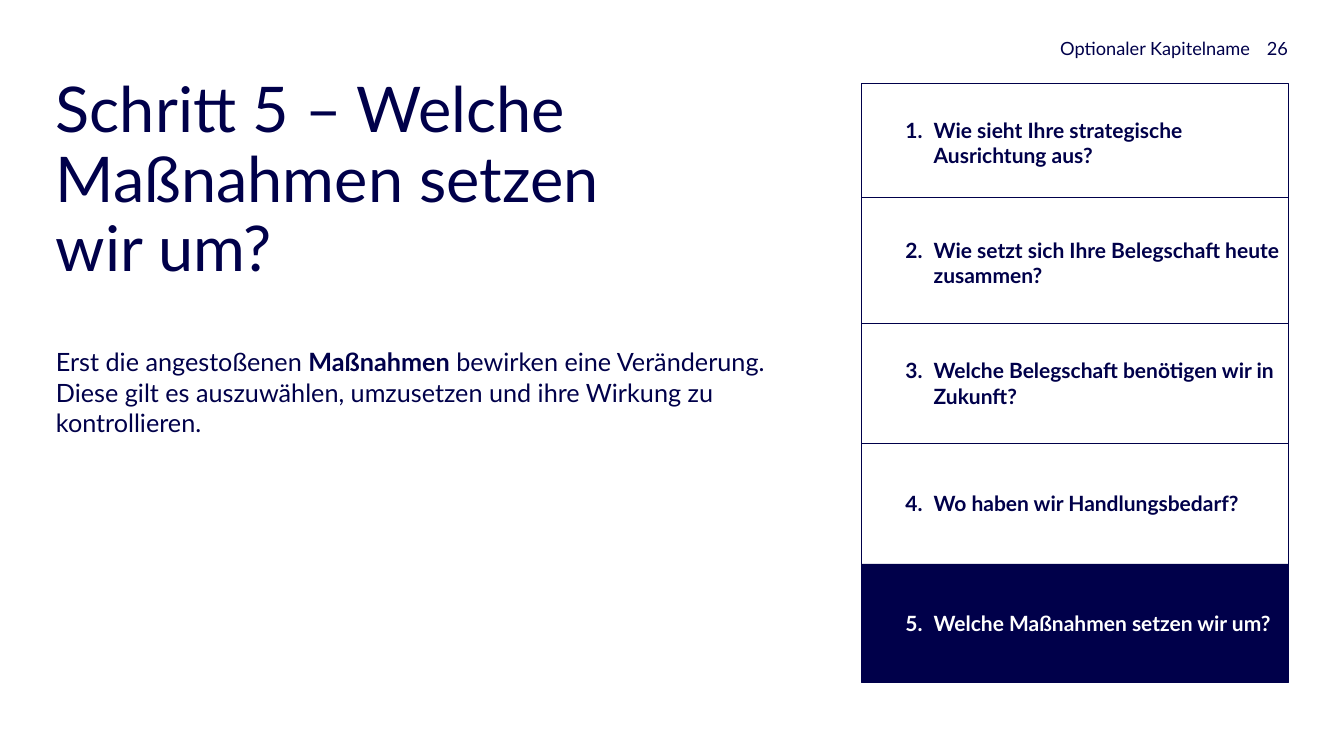
from lxml import etree
from pptx import Presentation
from pptx.dml.color import RGBColor
from pptx.enum.shapes import MSO_CONNECTOR, MSO_SHAPE
from pptx.enum.text import MSO_ANCHOR, PP_ALIGN
from pptx.oxml.ns import qn
from pptx.util import Inches, Pt

RECTANGLE = MSO_SHAPE.RECTANGLE
STRAIGHT = MSO_CONNECTOR.STRAIGHT
TOP, MIDDLE, BOTTOM = MSO_ANCHOR.TOP, MSO_ANCHOR.MIDDLE, MSO_ANCHOR.BOTTOM
LEFT, RIGHT = PP_ALIGN.LEFT, PP_ALIGN.RIGHT

FONT = "Lato"
COLORS = {"navy": "00004A", "white": "FFFFFF"}
STEPS = [
    "Wie sieht Ihre strategische Ausrichtung aus?",
    "Wie setzt sich Ihre Belegschaft heute zusammen?",
    "Welche Belegschaft benötigen wir in Zukunft?",
    "Wo haben wir Handlungsbedarf?",
    "Welche Maßnahmen setzen wir um?",
]
ACTIVE_STEP = 5
STEP_HEIGHT = 2.35
DIVIDERS = [3.92, 6.41, 8.8]


def color(name):
    """Return the named colour."""
    return RGBColor.from_string(COLORS[name])


def prepare_frame(shape, anchor, margins=(0, 0, 0, 0)):
    """Set wrapping, anchor and margins, and return the text frame."""
    frame = shape.text_frame
    frame.word_wrap = True
    frame.vertical_anchor = anchor
    frame.margin_left, frame.margin_top, frame.margin_right, frame.margin_bottom = map(Inches, margins)
    return frame


def add_run(paragraph, text, size, color_name="navy", bold=False):
    """Append a formatted run to a paragraph."""
    run = paragraph.add_run()
    run.text = text
    run.font.name = FONT
    run.font.size = Pt(size)
    run.font.bold = bold
    run.font.color.rgb = color(color_name)


def add_text(slide, box, pieces, size, anchor=TOP, align=LEFT, spacing=None):
    """Add a text box whose pieces are (text, bold) pairs."""
    shape = slide.shapes.add_textbox(*map(Inches, box))
    paragraph = prepare_frame(shape, anchor).paragraphs[0]
    paragraph.alignment = align
    if spacing:
        paragraph.line_spacing = spacing
    for text, bold in pieces:
        add_run(paragraph, text, size, bold=bold)


def add_number(paragraph, number, color_name):
    """Give a paragraph a hanging automatic number."""
    properties = paragraph._p.get_or_add_pPr()
    properties.set("marL", str(Inches(0.56)))
    properties.set("indent", str(-Inches(0.56)))
    bullet_color = etree.SubElement(properties, qn("a:buClr"))
    etree.SubElement(bullet_color, qn("a:srgbClr"), val=COLORS[color_name])
    etree.SubElement(properties, qn("a:buFont"), typeface="+mj-lt")
    etree.SubElement(properties, qn("a:buAutoNum"), type="arabicPeriod", startAt=str(number))


def add_rectangle(slide, box):
    """Add a rectangle without shadow, fill or line."""
    shape = slide.shapes.add_shape(RECTANGLE, *map(Inches, box))
    shape.shadow.inherit = False
    shape.fill.background()
    shape.line.fill.background()
    return shape


def add_step(slide, box, number, text):
    """Add one numbered step, filled when it is the active one."""
    active = number == ACTIVE_STEP
    text_color = "white" if active else "navy"
    if active:
        shape = add_rectangle(slide, box)
        shape.fill.solid()
        shape.fill.fore_color.rgb = color("navy")
    else:
        shape = slide.shapes.add_textbox(*map(Inches, box))
    frame = prepare_frame(shape, MIDDLE, (0.87, 0.16, 0.16, 0.16))
    paragraph = frame.paragraphs[0]
    paragraph.alignment = LEFT
    add_number(paragraph, number, text_color)
    add_run(paragraph, text, 30, text_color, bold=True)


def add_divider(slide, left, right, y):
    """Add a thin horizontal line."""
    line = slide.shapes.add_connector(STRAIGHT, *map(Inches, (left, y, right, y)))
    line.line.color.rgb = color("navy")
    line.line.width = Pt(0.5)
    etree.SubElement(line._element.spPr, qn("a:effectLst"))


def add_step_panel(slide, box):
    """Add the framed list of steps with its dividers."""
    left, top, width, height = box
    outline = add_rectangle(slide, box)
    outline.line.color.rgb = color("navy")
    outline.line.width = Pt(0.75)
    pitch = (height - STEP_HEIGHT) / (len(STEPS) - 1)
    for index, text in enumerate(STEPS):
        add_step(slide, (left, top + index * pitch, width, STEP_HEIGHT), index + 1, text)
    for y in DIVIDERS:
        add_divider(slide, left, left + width, y)


def add_header(slide, box):
    """Add the chapter name and the page number."""
    left, top, width, height = box
    number_width = 0.75
    chapter_width = width - number_width
    add_text(slide, (left, top, chapter_width, height),
             [("Optionaler Kapitelname", False)], 26, BOTTOM, RIGHT)
    add_text(slide, (left + chapter_width, top, number_width, height),
             [("26", False)], 26, BOTTOM, RIGHT)


def add_message(slide, box):
    """Add the title and the explanation below it."""
    left, top, width, height = box
    body_top = 6.88
    add_text(slide, (left, top, 12.22, 2.99),
             [("Schritt 5 – Welche Maßnahmen setzen wir um?", False)], 90, spacing=0.92)
    add_text(slide, (left, body_top, width, top + height - body_top), [
        ("Erst die angestoßenen ", False),
        ("Maßnahmen", True),
        (" bewirken eine Veränderung. Diese gilt es auszuwählen, umzusetzen "
         "und ihre Wirkung zu kontrollieren.", False),
    ], 36)


def main():
    """Build and save the slide."""
    presentation = Presentation()
    presentation.slide_width = Inches(26.66)
    presentation.slide_height = Inches(15)
    slide = presentation.slides.add_slide(presentation.slide_layouts[6])
    add_message(slide, (1.11, 1.53, 14.44, 12.01))
    add_header(slide, (1.11, 0, 24.44, 1.18))
    add_step_panel(slide, (17.09, 1.66, 8.47, 11.88))
    presentation.save("out.pptx")


if __name__ == "__main__":
    main()
